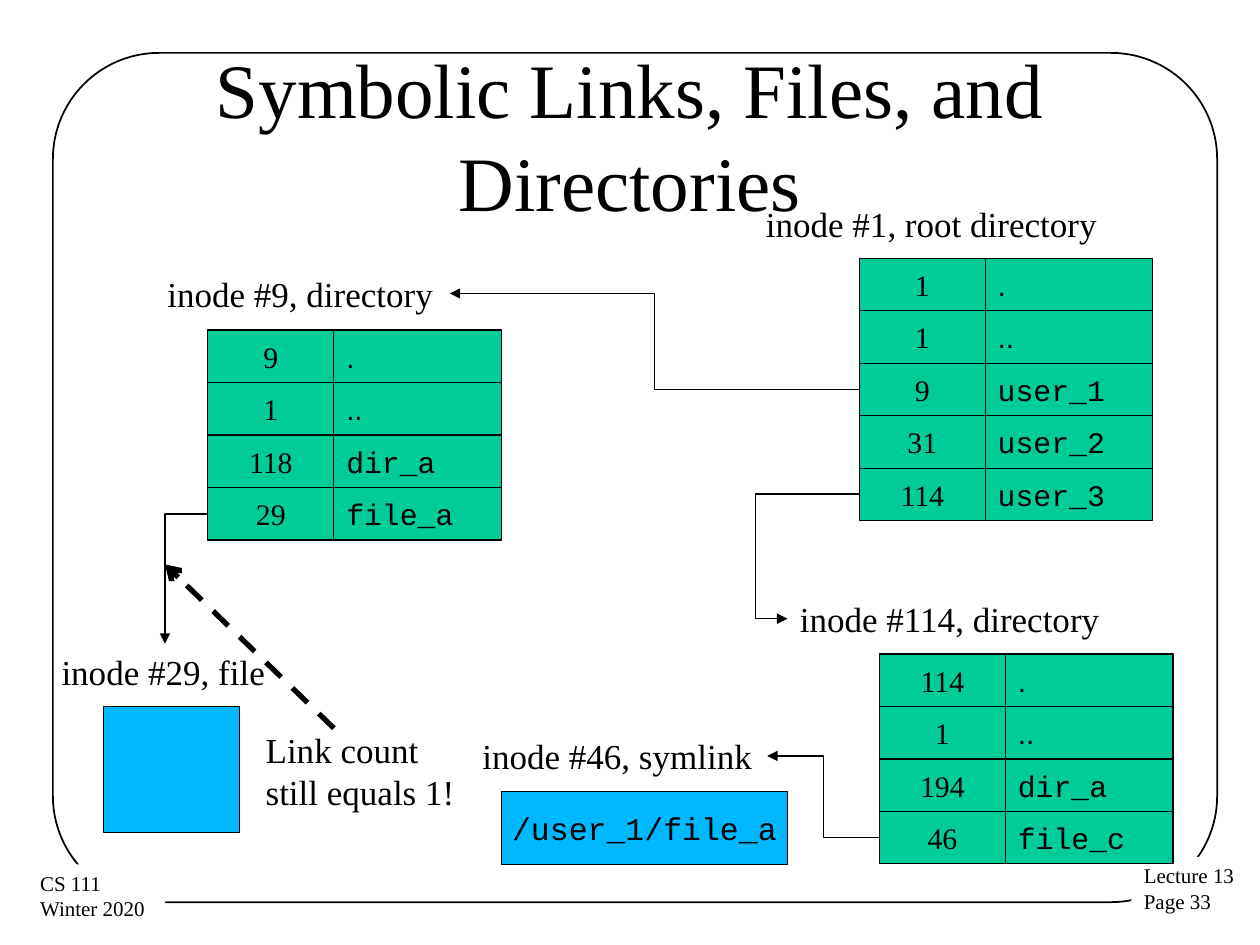
from lxml.etree import SubElement
from pptx import Presentation
from pptx.dml.color import RGBColor
from pptx.enum.dml import MSO_LINE
from pptx.enum.shapes import MSO_CONNECTOR, MSO_SHAPE
from pptx.enum.text import MSO_ANCHOR, MSO_AUTO_SIZE, PP_ALIGN
from pptx.oxml.ns import qn
from pptx.util import Inches, Pt

COLORS = {"ink": "000000", "paper": "FFFFFF", "entry": "00CC99", "data": "00B8FF"}
SERIF, MONO, SANS = "Times New Roman", "Courier New", "Arial"
INK = RGBColor.from_string(COLORS["ink"])

prs = Presentation()
prs.slide_width, prs.slide_height = Inches(10), Inches(7.5)
s = prs.slides.add_slide(prs.slide_layouts[5])


def write(sp, lines, size, font=SERIF, align=PP_ALIGN.LEFT, wrap=False):
    tf = sp.text_frame
    tf.word_wrap = wrap
    for i, line in enumerate(lines):
        p = tf.paragraphs[0] if i == 0 else tf.add_paragraph()
        p.alignment = align
        r = p.add_run()
        r.text = line
        r.font.size, r.font.name = Pt(size), font
        r.font.color.rgb = INK


def add_box(x, y, w, h, fill=None, line=0.75, kind=MSO_SHAPE.RECTANGLE):
    """Add a shape; no fill colour or a zero line width leaves that part out."""
    sp = s.shapes.add_shape(kind, Inches(x), Inches(y), Inches(w), Inches(h))
    sp.shadow.inherit = False
    if fill:
        sp.fill.solid()
        sp.fill.fore_color.rgb = RGBColor.from_string(COLORS[fill])
    else:
        sp.fill.background()
    if line:
        sp.line.color.rgb, sp.line.width = INK, Pt(line)
    else:
        sp.line.fill.background()
    sp.text_frame.vertical_anchor = MSO_ANCHOR.MIDDLE
    return sp


# Frame and footers
frame = add_box(0.42, 0.42, 9.24, 6.74, line=1, kind=MSO_SHAPE.ROUNDED_RECTANGLE)
frame.adjustments[0] = 0.125
footers = [
    (8.98, 6.8, 0.93, ["Lecture 13", "Page 33"]),
    (0.22, 6.86, 1.09, ["CS 111", "Winter 2020"]),
]
for x, y, w, lines in footers:
    sp = add_box(x, y, w, 0.51, "paper", line=0)
    sp.text_frame.vertical_anchor = MSO_ANCHOR.TOP
    write(sp, lines, 12)

# Title
title = s.shapes.title
title.left, title.top = Inches(0.5), Inches(0.44)
title.width, title.height = Inches(9), Inches(1.25)
title.text_frame.auto_size = MSO_AUTO_SIZE.NONE
title.text_frame.vertical_anchor = MSO_ANCHOR.MIDDLE
write(title, ["Symbolic Links, Files, and Directories"], 44,
      align=PP_ALIGN.CENTER, wrap=True)

# Directories: one row per entry, inode number and name
ROW_H = 1.25 / 3
NUMBER_W, NAME_W = 1, 1.33
directories = [
    (6.82, 2.05, [("1", "."), ("1", ".."), ("9", "user_1"),
                  ("31", "user_2"), ("114", "user_3")]),
    (1.65, 2.62, [("9", "."), ("1", ".."), ("118", "dir_a"), ("29", "file_a")]),
    (6.98, 5.19, [("114", "."), ("1", ".."), ("194", "dir_a"), ("46", "file_c")]),
]
for x, top, entries in directories:
    for i, (number, name) in enumerate(entries):
        y = top + i * ROW_H
        write(add_box(x, y, NUMBER_W, ROW_H, "entry"), [number], 17,
              align=PP_ALIGN.CENTER)
        name_font = SANS if name in (".", "..") else MONO
        write(add_box(x + NUMBER_W, y, NAME_W, ROW_H, "entry"), [name], 17, name_font)

# File contents
add_box(0.82, 5.61, 1.08, 1, "data")
symlink = add_box(3.98, 6.28, 2.27, 0.58, "data")
write(symlink, ["/user_1/file_a"], 18, MONO, PP_ALIGN.CENTER)

# Labels
labels = [
    (5.98, 1.56, 2.85, 0.44, "inode #1, root directory", False),
    (1.23, 2.11, 2.34, 0.44, "inode #9, directory", False),
    (6.25, 4.69, 2.6, 0.44, "inode #114, directory", False),
    (0.39, 5.11, 1.83, 0.44, "inode #29, file", False),
    (3.73, 5.78, 2.36, 0.44, "inode #46, symlink", False),
    (2.01, 5.73, 1.72, 0.77, "Link count still equals 1!", True),
]
for x, y, w, h, text, wrap in labels:
    tb = s.shapes.add_textbox(Inches(x), Inches(y), Inches(w), Inches(h))
    write(tb, [text], 20, wrap=wrap)

# Arrows: start, end, preset, bend position, line width, arrowhead
arrows = [
    ((6.82, 3.09), (3.57, 2.33), "bentConnector3", 0.5, 0.75, "triangle"),
    ((6.82, 3.92), (6.25, 4.91), "bentConnector3", 1.44, 0.75, "triangle"),
    ((1.65, 4.08), (1.31, 5.11), "bentConnector2", None, 0.75, "triangle"),
    ((6.98, 6.65), (6.09, 6), "bentConnector3", 0.5, 0.75, "triangle"),
    ((2.65, 5.78), (1.31, 4.48), "line", None, 3, "arrow"),
]
for start, end, preset, bend, width, head in arrows:
    kind = MSO_CONNECTOR.STRAIGHT if preset == "line" else MSO_CONNECTOR.ELBOW
    cx = s.shapes.add_connector(kind, *(Inches(v) for v in start + end))
    cx.line.color.rgb, cx.line.width = INK, Pt(width)
    if preset == "line":
        cx.line.dash_style = MSO_LINE.DASH
    sp_pr = cx.element.spPr
    geom = sp_pr.find(qn("a:prstGeom"))
    geom.set("prst", preset)
    if bend:
        SubElement(geom.find(qn("a:avLst")), qn("a:gd"), name="adj1",
                   fmla=f"val {round(bend * 100000)}")
    SubElement(sp_pr.find(qn("a:ln")), qn("a:tailEnd"), type=head)
    SubElement(sp_pr, qn("a:effectLst"))

prs.save("out.pptx")
